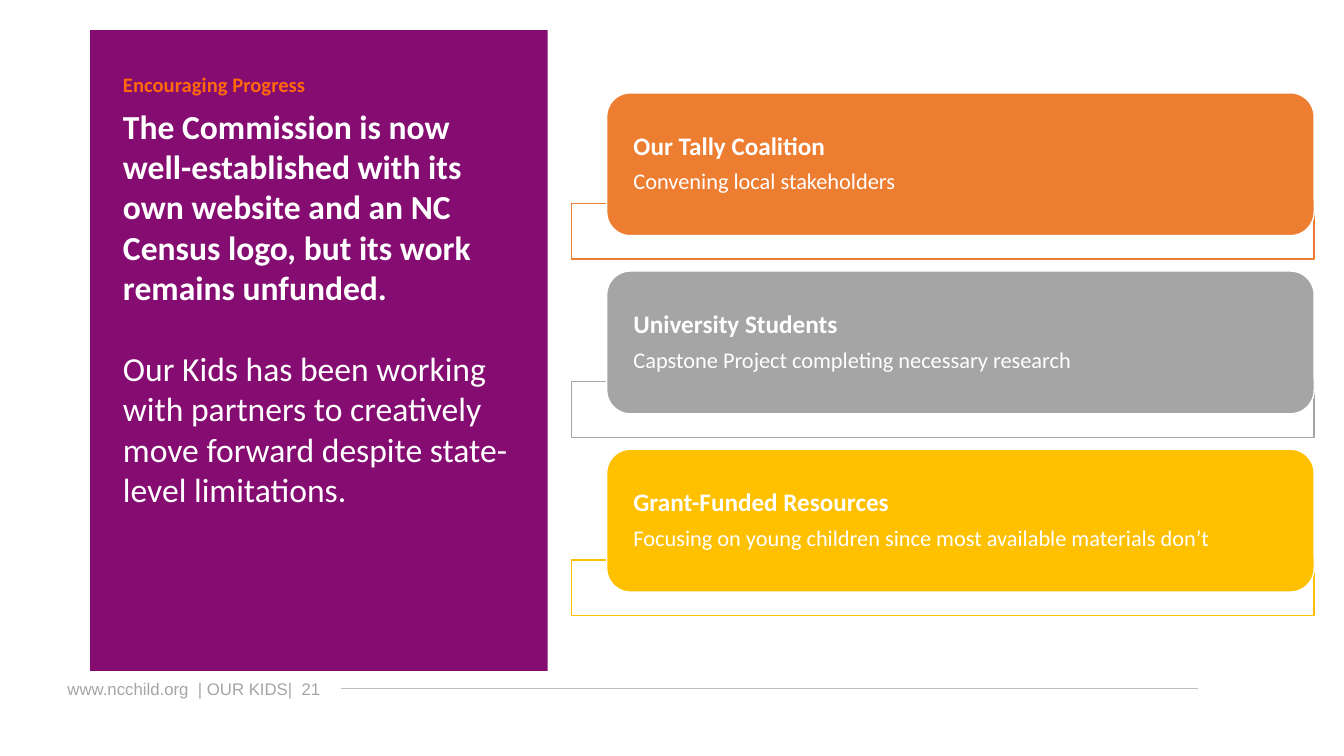
from lxml import etree
from pptx import Presentation, util as u
from pptx.dml.color import RGBColor
from pptx.enum import shapes, text
from pptx.oxml.ns import qn

PARTNERS = [
    ("Our Tally Coalition", "Convening local stakeholders", "ED7D31"),
    ("University Students", "Capstone Project completing necessary research", "A5A5A5"),
    ("Grant-Funded Resources",
     "Focusing on young children since most available materials don’t", "FFC000"),
]


def color(hex_value):
    """Turn a hex string into a colour."""
    return RGBColor.from_string(hex_value)


def add_block(slide, kind, box, fill, line=None):
    """Add a filled preset shape in a box given in centimetres."""
    block = slide.shapes.add_shape(kind, *map(u.Cm, box))
    block.shadow.inherit = False
    block.fill.solid()
    block.fill.fore_color.rgb = color(fill)
    if line:
        block.line.color.rgb = color(line)
        block.line.width = u.Pt(1)
    else:
        block.line.fill.background()
    return block


def write(frame, lines, gap=0):
    """Write (words, size, bold, colour, font) lines with a gap in points between them."""
    frame.word_wrap = True
    for index, (words, size, bold, hex_value, font) in enumerate(lines):
        paragraph = frame.paragraphs[0] if index == 0 else frame.add_paragraph()
        paragraph.text = words
        paragraph.alignment = text.PP_ALIGN.LEFT
        if index:
            paragraph.space_before = u.Pt(gap)
        paragraph.font.size = u.Pt(size)
        paragraph.font.bold = bold
        paragraph.font.name = font
        paragraph.font.color.rgb = color(hex_value)


def add_text(slide, box, lines, gap=0):
    """Add a wrapped text box in a box given in centimetres."""
    write(slide.shapes.add_textbox(*map(u.Cm, box)).text_frame, lines, gap)


def add_message_panel(slide, left, top, width, height):
    """Add the purple panel with its kicker and message."""
    add_block(slide, shapes.MSO_SHAPE.RECTANGLE, (left, top, width, height), "850C70")
    add_text(slide, (left + 0.58, top + 1.78, width - 1.19, height - 2.64), [
        ("The Commission is now well-established with its own website and an NC "
         "Census logo, but its work remains unfunded.", 24, True, "FFFFFF", "Calibri"),
        ("Our Kids has been working with partners to creatively move forward "
         "despite state-level limitations.", 24, False, "FFFFFF", "Calibri"),
    ], gap=29)
    add_text(slide, (left + 0.58, top + 0.92, width - 1.75, 0.86),
             [("Encouraging Progress", 14.7, True, "FF690A", "Calibri")])


def add_partner(slide, left, top, width, height, partner):
    """Add one partner card over its outlined tray."""
    name, role, accent = partner
    tray = add_block(slide, shapes.MSO_SHAPE.RECTANGLE,
                     (left, top + 2.79, width, 1.4), "FFFFFF", accent)
    tray_color = tray.fill._xPr.find(qn("a:solidFill"))[0]
    etree.SubElement(tray_color, qn("a:alpha")).set("val", "90000")

    card = add_block(slide, shapes.MSO_SHAPE.ROUNDED_RECTANGLE,
                     (left + 0.89, top, width - 0.89, height), accent, "FFFFFF")
    frame = card.text_frame
    frame.margin_left = frame.margin_right = u.Cm(0.5)
    frame.margin_top = frame.margin_bottom = 0
    frame.vertical_anchor = text.MSO_ANCHOR.MIDDLE
    write(frame, [(name, 18, True, "FFFFFF", "Calibri"),
                  (role, 16, False, "FFFFFF", "Calibri")], gap=6.8)
    for paragraph in frame.paragraphs:
        paragraph.line_spacing = 0.9


def add_partners(slide, left, top, width, pitch):
    """Stack the partner cards at an equal pitch."""
    for row, partner in enumerate(PARTNERS):
        add_partner(slide, left, top + row * pitch, width, 3.6, partner)


def add_footer(slide, left, top, width, height):
    """Add the footer words and the rule beside them."""
    add_text(slide, (left, top, width, height),
             [("www.ncchild.org  | OUR KIDS|  21", 12, False, "A5A5A5", "Arial")])
    middle = u.Cm(top + height / 2)
    rule = slide.shapes.add_connector(shapes.MSO_CONNECTOR.STRAIGHT,
                                      u.Cm(left + 7.14), middle, u.Cm(left + 28.73), middle)
    rule.line.color.rgb = color("BFBFBF")
    rule.line.width = u.Pt(0.75)
    etree.SubElement(rule._element.spPr, qn("a:effectLst"))


def main():
    """Build and save the slide."""
    deck = Presentation()
    deck.slide_width, deck.slide_height = u.Cm(33.87), u.Cm(19.05)
    slide = deck.slides.add_slide(deck.slide_layouts[6])
    add_message_panel(slide, 2.27, 0.76, 11.53, 16.15)
    add_footer(slide, 1.45, 16.97, 18.34, 0.78)
    add_partners(slide, 14.4, 2.34, 18.72, 4.49)
    deck.save("out.pptx")


if __name__ == "__main__":
    main()
